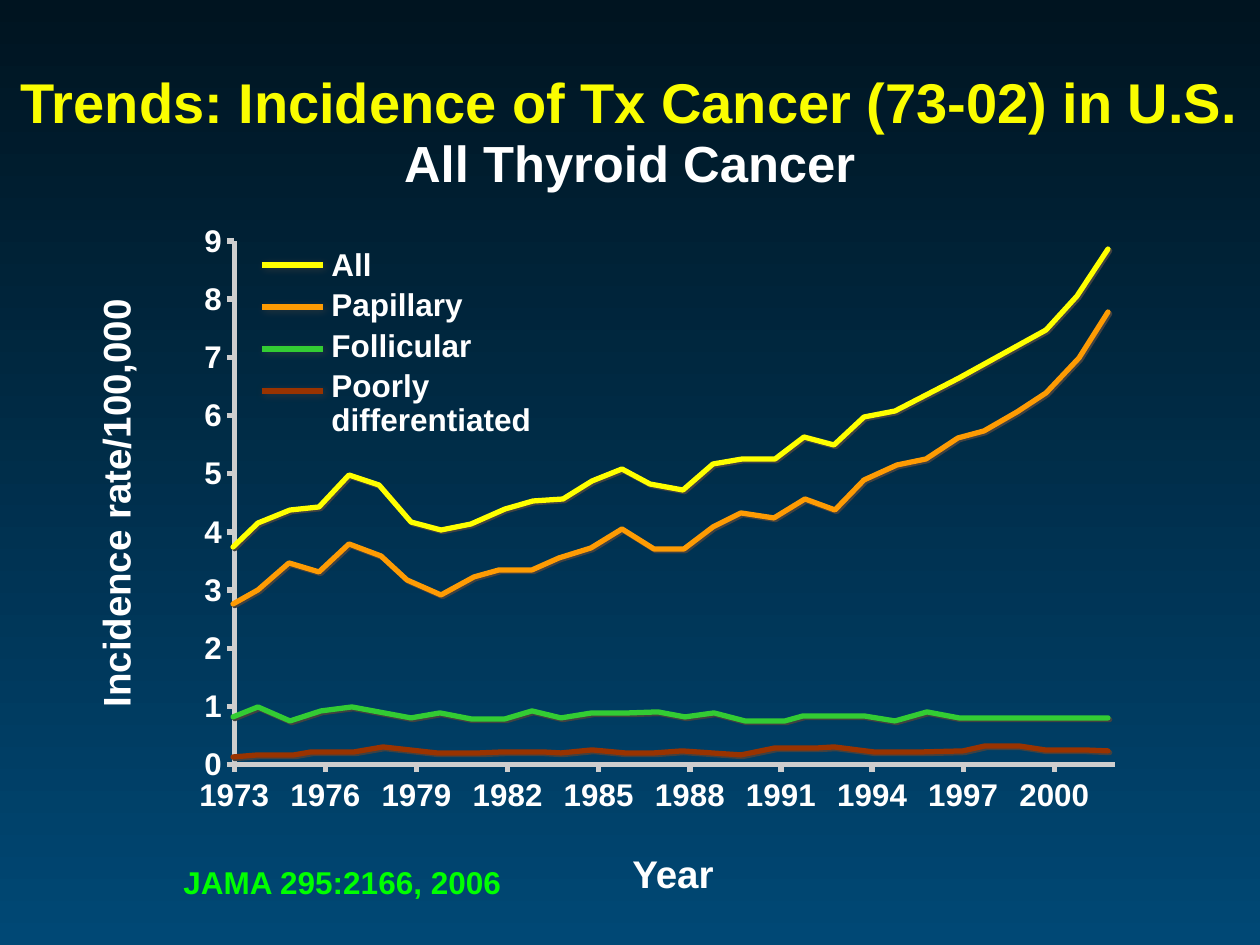
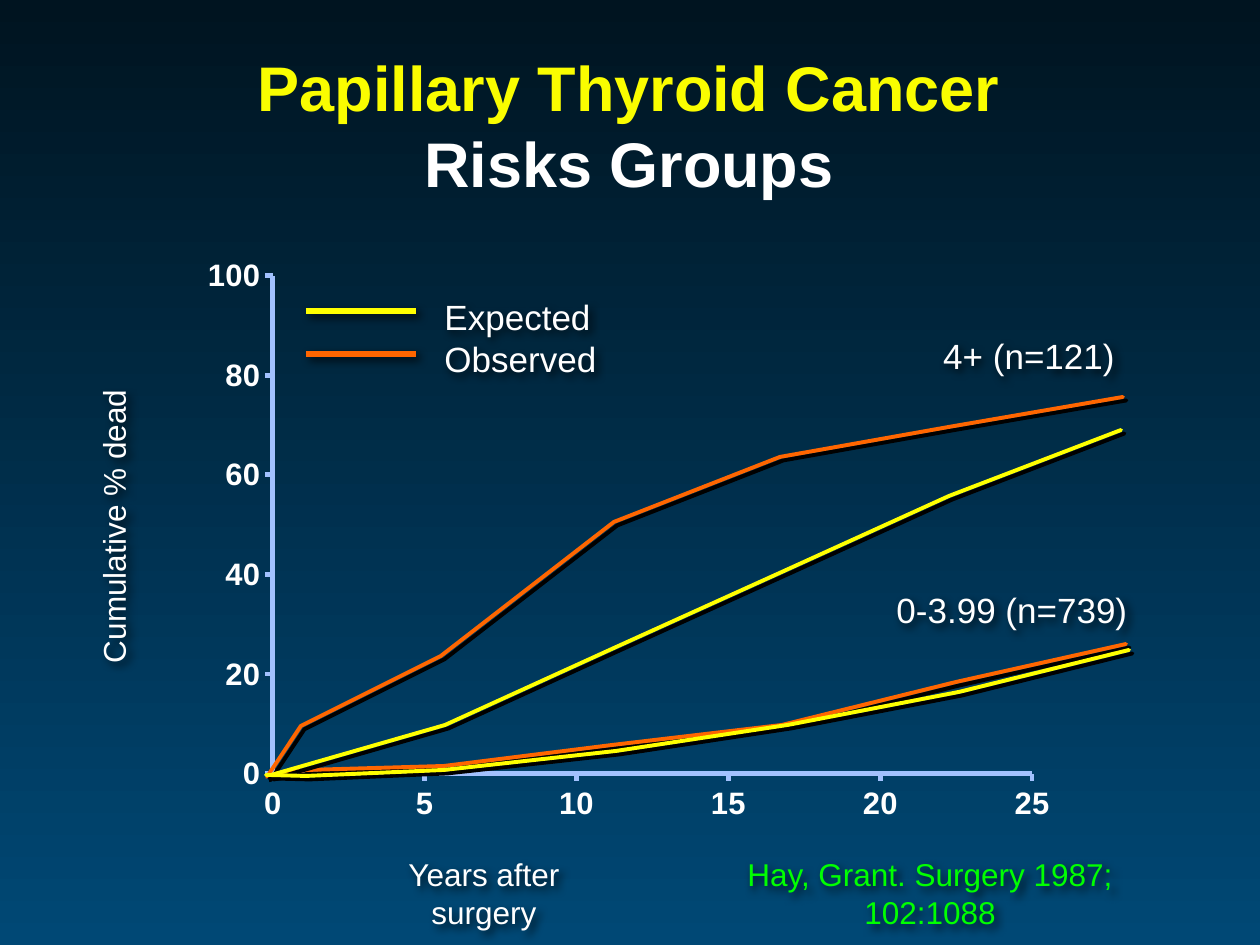
from dataclasses import dataclass

from lxml import etree
from pptx import Presentation
from pptx import util as u
from pptx.chart.data import XyChartData
from pptx.dml.color import RGBColor
from pptx.enum import chart as charts, shapes, text
from pptx.oxml import parse_xml
from pptx.oxml.ns import nsdecls, qn

PX = 914400 / 126


def px(length):
    return u.Emu(round(length * PX))


@dataclass(frozen=True)
class Theme:
    font: str = "Arial"
    sky: str = "001420"
    sea: str = "004875"
    title: str = "FAFD00"
    white: str = "FFFFFF"
    source: str = "00FF00"
    yellow: str = "FFFF00"
    amber: str = "FE9B03"
    green: str = "33CC33"
    brown: str = "993300"
    orange: str = "FF6600"
    grey_axis: str = "CECECE"
    blue_axis: str = "A2C1FE"
    label: int = 18
    note: int = 20
    axis_title: int = 22


THEME = Theme()

# Shadows: colour, opacity %, blur pt, distance pt
CURVE_GREY = ("414141", 100, 0, 1.4)
KEY_GREY = ("414141", 75, 5, 1.4)
CURVE_BLACK = ("000000", 100, 0, 2.8)
SOFT_BLACK = ("000000", 75, 5, 3)


def write(frame, paragraphs, size=18, color=THEME.white, bold=False,
          align=text.PP_ALIGN.CENTER, spacing=None, before=0):
    """Fill a frame; a paragraph is a string or a list of (text, size, colour)."""
    for index, content in enumerate(paragraphs):
        para = frame.paragraphs[0] if index == 0 else frame.add_paragraph()
        para.alignment = align
        para.space_before = u.Pt(before if index else 0)
        if spacing:
            para.line_spacing = spacing
        spans = [(content, size, color)] if isinstance(content, str) else content
        for words, points, tint in spans:
            for number, line in enumerate(words.split("\n")):
                if number:
                    para.add_line_break()
                if not line:
                    continue
                span = para.add_run()
                span.text = line
                span.font.name = THEME.font
                span.font.size = u.Pt(points)
                span.font.bold = bold
                span.font.color.rgb = RGBColor.from_string(tint)


def cast_shadow(shape, shadow):
    color, opacity, blur, distance = shadow
    properties = shape._element.spPr
    for old in properties.findall(qn("a:effectLst")):
        properties.remove(old)
    properties.append(parse_xml(
        f'<a:effectLst {nsdecls("a")}><a:outerShdw blurRad="{u.Pt(blur)}" '
        f'dist="{u.Pt(distance)}" dir="2700000" algn="ctr" rotWithShape="0">'
        f'<a:srgbClr val="{color}"><a:alpha val="{opacity * 1000}"/></a:srgbClr>'
        '</a:outerShdw></a:effectLst>'))


class Page:
    def __init__(self, deck, theme):
        self.theme = theme
        self.slide = deck.slides.add_slide(deck.slide_layouts[5])
        self.shapes = self.slide.shapes

    def title(self, box, first, second, sizes, spacing=None):
        shape = self.shapes.title
        shape.left, shape.top, shape.width, shape.height = map(px, box)
        frame = shape.text_frame
        frame.auto_size = text.MSO_AUTO_SIZE.NONE
        frame.vertical_anchor = text.MSO_ANCHOR.MIDDLE
        write(frame, [[(first + "\n", sizes[0], self.theme.title),
                       (second, sizes[1], self.theme.white)]],
              bold=True, spacing=spacing)

    def label(self, box, *paragraphs, wrap=False, turn=0, shadow=None, **style):
        shape = self.shapes.add_textbox(*map(px, box))
        shape.rotation = turn
        shape.text_frame.word_wrap = wrap
        write(shape.text_frame, paragraphs, **style)
        if shadow:
            cast_shadow(shape, shadow)

    def axes(self, box, plot, point, x_range, y_range, color, width, size):
        data = XyChartData()
        data.add_series("Series 1").add_data_point(*point)
        chart = self.shapes.add_chart(
            charts.XL_CHART_TYPE.XY_SCATTER_LINES_NO_MARKERS,
            *map(px, box), data).chart
        chart.has_legend = chart.has_title = False
        chart.font.name = self.theme.font
        chart.font.size = u.Pt(size)
        chart.font.bold = True
        chart.font.color.rgb = RGBColor.from_string(self.theme.white)
        series = chart.plots[0].series[0]
        series.smooth = False
        series.marker.style = charts.XL_MARKER_STYLE.NONE
        series.format.line.fill.background()
        chart.plots[0].vary_by_categories = False
        for axis, limits in ((chart.category_axis, x_range),
                             (chart.value_axis, y_range)):
            axis.minimum_scale, axis.maximum_scale, axis.major_unit = limits
            axis.has_major_gridlines = False
            axis.major_tick_mark = charts.XL_TICK_MARK.OUTSIDE
            axis.minor_tick_mark = charts.XL_TICK_MARK.NONE
            axis.crosses = charts.XL_AXIS_CROSSES.MINIMUM
            axis.tick_labels.number_format = "0;[Red]0"
            axis.tick_labels.number_format_is_linked = False
            axis.format.line.color.rgb = RGBColor.from_string(color)
            axis.format.line.width = u.Pt(width)
        self.place_plot(chart, plot)

    def place_plot(self, chart, plot):
        area = chart._chartSpace.chart.plotArea
        for old in area.findall(qn("c:layout")):
            area.remove(old)
        layout = etree.Element(qn("c:layout"))
        manual = etree.SubElement(layout, qn("c:manualLayout"))
        settings = [("layoutTarget", "inner"), ("xMode", "edge"),
                    ("yMode", "edge"), *zip("xywh", plot)]
        for name, value in settings:
            etree.SubElement(manual, qn(f"c:{name}")).set("val", str(value))
        area.insert(0, layout)

    def curve(self, points, color, width, shadow):
        builder = self.shapes.build_freeform(*points[0], scale=PX)
        builder.add_line_segments(points[1:], close=False)
        shape = builder.convert_to_shape()
        shape.fill.background()
        self.stroke(shape, color, width, shadow)
        shape._element.spPr.find(qn("a:ln")).set("cap", "rnd")

    def key(self, left, right, y, color, width, shadow):
        line = self.shapes.add_connector(
            shapes.MSO_CONNECTOR.STRAIGHT, px(left), px(y), px(right), px(y))
        self.stroke(line, color, width, shadow)

    def stroke(self, shape, color, width, shadow):
        shape.line.color.rgb = RGBColor.from_string(color)
        shape.line.width = u.Pt(width)
        cast_shadow(shape, shadow)


# Curve vertices, in px
ALL = [
    (233, 547), (258, 523), (290, 510), (319, 507), (349, 475), (379, 485),
    (411, 522), (441, 530), (471, 524), (505, 509), (533, 501), (563, 499),
    (592, 481), (622, 469), (650, 484), (683, 490), (713, 464), (742, 459),
    (775, 459), (804, 437), (834, 445), (864, 417), (895, 411), (959, 378),
    (1046, 330), (1077, 296), (1108, 249)]
PAPILLARY = [
    (233, 604), (258, 590), (289, 563), (319, 572), (349, 544), (381, 556),
    (407, 580), (441, 595), (474, 577), (499, 570), (532, 570), (559, 558),
    (591, 548), (622, 529), (654, 549), (684, 549), (713, 527), (741, 513),
    (774, 518), (805, 499), (835, 510), (864, 480), (897, 465), (926, 459),
    (958, 438), (984, 431), (1017, 412), (1046, 393), (1079, 358), (1108, 312)]
FOLLICULAR = [
    (233, 717), (258, 707), (290, 721), (321, 711), (352, 707), (411, 718),
    (440, 713), (471, 719), (505, 719), (532, 711), (561, 718), (592, 713),
    (629, 713), (658, 712), (685, 717), (714, 713), (745, 721), (785, 721),
    (803, 716), (864, 716), (895, 721), (927, 712), (959, 718), (1108, 718)]
POORLY = [
    (233, 757), (258, 755), (294, 755), (311, 752), (354, 752), (383, 747),
    (437, 753), (479, 753), (503, 752), (543, 752), (561, 753), (592, 750),
    (625, 753), (654, 753), (682, 751), (741, 755), (775, 748), (818, 748),
    (834, 747), (874, 752), (922, 752), (963, 751), (985, 746), (1019, 746),
    (1045, 750), (1084, 750), (1108, 751)]
OBSERVED_LOW = [(270, 776), (306, 770), (444, 766), (612, 745), (782, 725),
                (956, 682), (1126, 644)]
OBSERVED_HIGH = [(267, 777), (301, 726), (441, 656), (614, 522), (780, 457),
                 (949, 427), (1123, 397)]
EXPECTED_HIGH = [(271, 775), (445, 725), (614, 648), (784, 571), (949, 496),
                 (1121, 430)]
EXPECTED_LOW = [(266, 775), (306, 776), (444, 770), (616, 751), (788, 725),
                (959, 692), (1129, 650)]


def incidence_page(deck):
    page = Page(deck, THEME)
    page.title((0, 48, 1260, 170), "Trends: Incidence of Tx Cancer (73-02) in U.S.",
               "All Thyroid Cancer", (32, 29), spacing=0.95)
    page.axes((185, 212, 969, 629), (0.051, 0.046, 0.909, 0.833), (0, 0.5),
              (1973, 2002, 3), (0, 9, 1), THEME.grey_axis, 3, 17.9)

    # Axis titles and source
    for box, words, turn in (((-102, 474, 435, 59), "Incidence rate/100,000", 270),
                             ((619, 844, 108, 59), "Year", 0)):
        page.label(box, words, turn=turn, size=THEME.axis_title, bold=True)
    left = text.PP_ALIGN.LEFT
    page.label((171, 857, 400, 50), "JAMA 295:2166, 2006", wrap=True,
               size=THEME.label, color=THEME.source, bold=True, align=left)

    # Curves and their legend
    curves = {"All": (ALL, THEME.yellow), "Papillary": (PAPILLARY, THEME.amber),
              "Follicular": (FOLLICULAR, THEME.green),
              "Poorly\ndifferentiated": (POORLY, THEME.brown)}
    for row, (points, color) in enumerate(curves.values()):
        page.curve(points, color, 3, CURVE_GREY)
        page.key(262, 323, 265 + 42 * row, color, 3, KEY_GREY)
    page.label((319, 243, 331, 173), *curves, wrap=True, size=THEME.label,
               bold=True, align=left, spacing=0.9, before=3.6)


def risk_page(deck):
    page = Page(deck, THEME)
    page.title((94, 48, 1070, 152), "Papillary Thyroid Cancer", "Risks Groups",
               (36, 36))
    page.axes((189, 243, 864, 617), (0.097, 0.053, 0.879, 0.807), (0, 0),
              (0, 25, 5), (0, 100, 20), THEME.blue_axis, 2.66, 17.7)

    # Curves
    for points, color in ((OBSERVED_LOW, THEME.orange),
                          (OBSERVED_HIGH, THEME.orange),
                          (EXPECTED_HIGH, THEME.yellow),
                          (EXPECTED_LOW, THEME.yellow)):
        page.curve(points, color, 2.25, CURVE_BLACK)

    # Group labels and legend
    for box, words in (((930, 328, 198, 55), "4+ (n=121)"),
                       ((883, 582, 258, 55), "0-3.99 (n=739)")):
        page.label(box, words, size=THEME.note, shadow=SOFT_BLACK)
    page.label((432, 289, 260, 97), "Expected", "Observed", wrap=True,
               size=THEME.note, align=text.PP_ALIGN.LEFT, shadow=SOFT_BLACK)
    for y, color in ((311, THEME.yellow), (354, THEME.orange)):
        page.key(306, 416, y, color, 3.5, SOFT_BLACK)

    # Axis titles and source
    page.label((-163, 503, 558, 47), "Cumulative % dead", turn=270,
               size=THEME.label, spacing=0.9, shadow=SOFT_BLACK)
    page.label((344, 849, 280, 50), "Years after surgery", size=THEME.label,
               shadow=SOFT_BLACK)
    page.label((670, 849, 520, 50), "Hay, Grant. Surgery 1987; 102:1088",
               size=THEME.label, color=THEME.source, shadow=SOFT_BLACK)


def main():
    deck = Presentation()
    deck.slide_width, deck.slide_height = px(1260), px(945)
    # Shared background
    fill = deck.slide_master.background.fill
    fill.gradient()
    fill.gradient_angle = 270
    for stop, color in zip(fill.gradient_stops, (THEME.sky, THEME.sea)):
        stop.color.rgb = RGBColor.from_string(color)
    incidence_page(deck)
    risk_page(deck)
    deck.save("out.pptx")


if __name__ == "__main__":
    main()
